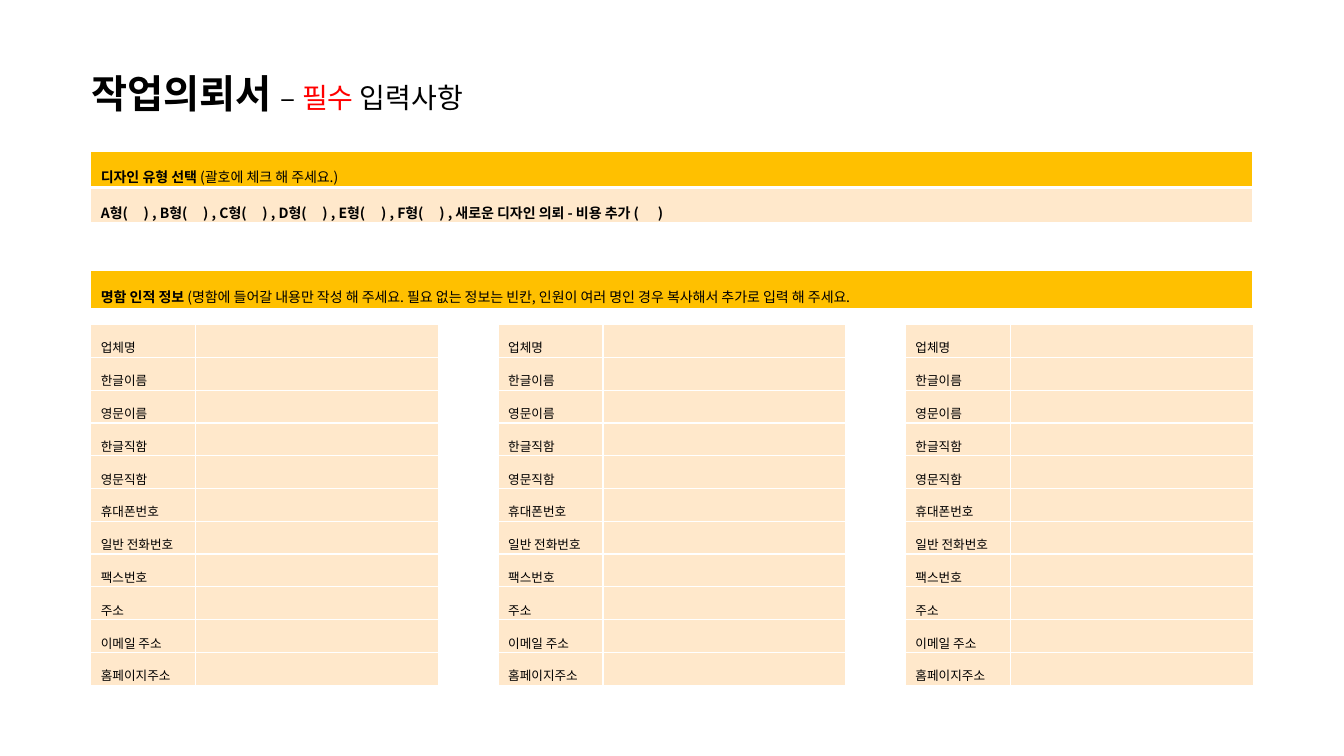
"""Build the business card work request form slide."""
from lxml.etree import SubElement
from pptx import Presentation
from pptx.dml.color import RGBColor
from pptx.enum.text import MSO_ANCHOR, MSO_AUTO_SIZE, PP_ALIGN
from pptx.oxml import parse_xml
from pptx.oxml.ns import nsdecls, qn
from pptx.util import Inches, Pt

FONT = "Noto Sans CJK KR"
BLACK, RED, WHITE = "000000", "FF0000", "FFFFFF"
AMBER, CREAM = "FFC000", "FFE8CB"
LEFT, FULL_WIDTH = 0.9, 11.52


def add_span(para, text, size, bold=False, color=BLACK):
    span = para.add_run()
    span.text = text
    span.font.size = Pt(size)
    span.font.bold = bold
    span.font.name = FONT
    span.font.color.rgb = RGBColor.from_string(color)
    SubElement(span.font._element, qn("a:ea")).set("typeface", FONT)


def add_form_table(left, top, widths, heights, rows, size):
    frame = page.shapes.add_table(len(rows), len(widths), Inches(left), Inches(top),
                                  Inches(sum(widths)), Inches(sum(heights)))
    table = frame.table
    table.first_row = table.horz_banding = False
    for column, width in zip(table.columns, widths):
        column.width = Inches(width)
    for row, height, (fill, cells) in zip(table.rows, heights, rows):
        row.height = Inches(height)
        for cell, spans in zip(row.cells, cells):
            cell.fill.solid()
            cell.fill.fore_color.rgb = RGBColor.from_string(fill)
            cell.vertical_anchor = MSO_ANCHOR.MIDDLE
            cell.margin_top, cell.margin_bottom = Inches(0.04), 0
            para = cell.text_frame.paragraphs[0]
            para.line_spacing = 1.5
            for text, bold in spans:
                add_span(para, text, size, bold)
            if not spans:
                SubElement(para._p, qn("a:endParaRPr")).set("sz", str(size * 100))
            for index, side in enumerate("LRTB"):
                points = 3 if fill == AMBER and side == "B" else 1
                cell._tc.get_or_add_tcPr().insert(index, parse_xml(
                    f'<a:ln{side} {nsdecls("a")} w="{Pt(points)}"><a:solidFill>'
                    f'<a:srgbClr val="{WHITE}"/></a:solidFill></a:ln{side}>'))


deck = Presentation()
deck.slide_width, deck.slide_height = Inches(13.33), Inches(7.5)
page = deck.slides.add_slide(deck.slide_layouts[5])

title = page.shapes.title
title.left, title.top = Inches(0.81), Inches(0.64)
title.width, title.height = Inches(4.33), Inches(0.57)
title.text_frame.word_wrap = False
title.text_frame.auto_size = MSO_AUTO_SIZE.NONE
title.text_frame.vertical_anchor = MSO_ANCHOR.MIDDLE
title_para = title.text_frame.paragraphs[0]
title_para.alignment = PP_ALIGN.LEFT
add_span(title_para, "작업의뢰서 ", 28, bold=True)
add_span(title_para, "– ", 20)
add_span(title_para, "필수", 20, color=RED)
add_span(title_para, " 입력사항", 20)

design_heading = [("디자인 유형 선택 ", True), ("(괄호에 체크 해 주세요.)", False)]
design_types = " , ".join(f"{letter}형(     )" for letter in "ABCDEF")
design_choices = [(design_types + " , 새로운 디자인 의뢰 - 비용 추가 (      )", True)]
add_form_table(LEFT, 1.5, [FULL_WIDTH], [0.36, 0.35],
               [(AMBER, [design_heading]), (CREAM, [design_choices])], 10)

person_heading = [
    ("명함 인적 정보 ", True),
    ("(명함에 들어갈 내용만 작성 해 주세요. 필요 없는 정보는 빈칸, "
     "인원이 여러 명인 경우 복사해서 추가로 입력 해 주세요.", False),
]
add_form_table(LEFT, 2.68, [FULL_WIDTH], [0.39], [(AMBER, [person_heading])], 10)

fields = ["업체명", "한글이름", "영문이름", "한글직함", "영문직함", "휴대폰번호",
          "일반 전화번호", "팩스번호", "주소", "이메일 주소", "홈페이지주소"]
person_rows = [(CREAM, [[(field, False)], []]) for field in fields]
for person in range(3):
    add_form_table(LEFT + person * 4.04, 3.22, [1.04, 2.41],
                   [3.58 / len(fields)] * len(fields), person_rows, 9)

deck.save("out.pptx")
